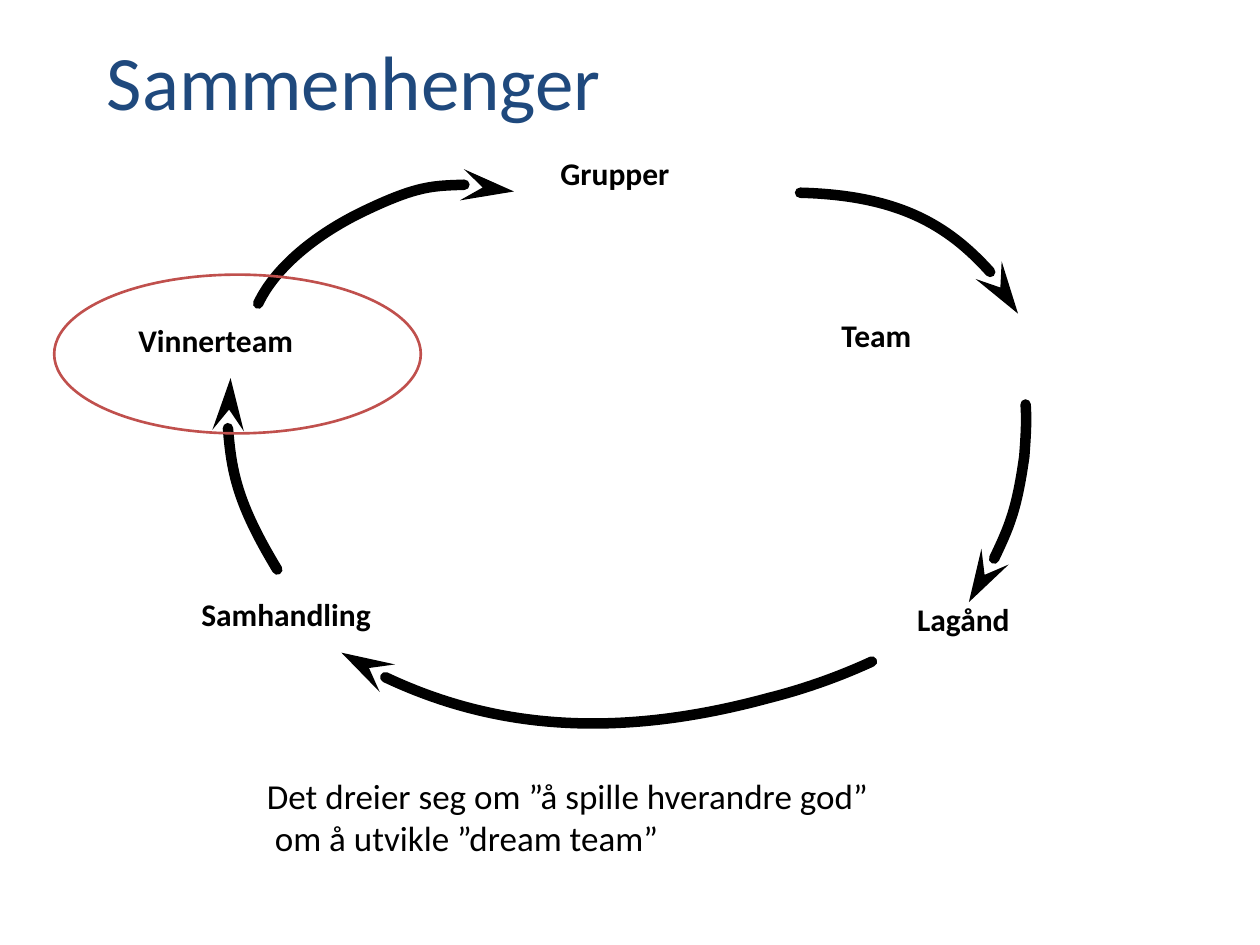
from math import cos, radians, sin

from pptx import Presentation
from pptx.dml.color import RGBColor
from pptx.enum.shapes import MSO_SHAPE
from pptx.enum.text import MSO_ANCHOR
from pptx.oxml.ns import qn
from pptx.oxml.xmlchemy import OxmlElement
from pptx.util import Inches, Pt

OVAL = MSO_SHAPE.OVAL
TOP, MIDDLE = MSO_ANCHOR.TOP, MSO_ANCHOR.MIDDLE

COLORS = {"title": "1F497D", "ink": "000000", "accent": "C0504D"}


def rotate(point, center, degrees):
    a = radians(degrees)
    dx, dy = point[0] - center[0], point[1] - center[1]
    return (center[0] + dx * cos(a) - dy * sin(a),
            center[1] + dx * sin(a) + dy * cos(a))


class Deck:
    font = "Calibri"

    def __init__(self, width, height):
        self.prs = Presentation()
        self.prs.slide_width, self.prs.slide_height = Inches(width), Inches(height)
        self.s = self.prs.slides.add_slide(self.prs.slide_layouts[6])

    def color(self, name):
        return RGBColor.from_string(COLORS[name])

    def outline(self, sp, color, weight):
        sp.shadow.inherit = False
        sp.fill.background()
        sp.line.color.rgb = self.color(color)
        sp.line.width = Pt(weight)

    def text(self, box, lines, size, color="ink", bold=False, anchor=TOP):
        tf = self.s.shapes.add_textbox(*map(Inches, box)).text_frame
        tf.word_wrap = True
        tf.vertical_anchor = anchor
        for i, line in enumerate(lines):
            p = tf.paragraphs[0] if i == 0 else tf.add_paragraph()
            p.text = line
            p.font.name, p.font.size, p.font.bold = self.font, Pt(size), bold
            p.font.color.rgb = self.color(color)

    def ellipse(self, box, color, weight):
        sp = self.s.shapes.add_shape(OVAL, *map(Inches, box))
        self.outline(sp, color, weight)

    def curved_arrow(self, box, rotation, points, color="ink", weight=6):
        """Start point, then three points for each Bézier segment."""
        left, top, width, height = box
        center = left + width / 2, top + height / 2
        level = [rotate(point, center, -rotation) for point in points]
        start, *rest = [(Inches(x), Inches(y)) for x, y in level]
        builder = self.s.shapes.build_freeform(*start)
        builder.add_line_segments(rest, close=False)
        sp = builder.convert_to_shape()
        self.outline(sp, color, weight)

        # Fit the frame to the box, keeping the points in place, then turn it
        dx, dy = sp.left - Inches(left), sp.top - Inches(top)
        for pt in sp._element.iter(qn("a:pt")):
            pt.set("x", str(int(pt.get("x")) + dx))
            pt.set("y", str(int(pt.get("y")) + dy))
        sp.left, sp.top, sp.width, sp.height = map(Inches, box)
        for geometry in sp._element.iter(qn("a:path")):
            geometry.set("w", str(sp.width))
            geometry.set("h", str(sp.height))
        sp.rotation = rotation

        # Merge every three straight steps into one cubic curve
        steps = list(sp._element.iter(qn("a:lnTo")))
        for i in range(0, len(steps), 3):
            curve = OxmlElement("a:cubicBezTo")
            steps[i].addprevious(curve)
            for step in steps[i:i + 3]:
                curve.append(step[0])
                step.getparent().remove(step)

        # Round ends and a long arrowhead
        ln = sp._element.spPr.find(qn("a:ln"))
        ln.set("cap", "rnd")
        ln.append(OxmlElement("a:round"))
        tail = OxmlElement("a:tailEnd")
        tail.set("type", "stealth")
        tail.set("len", "lg")
        ln.append(tail)


def main():
    deck = Deck(10, 7.5)

    # Title
    deck.text((0.75, 0.17, 8.5, 0.92), ["Sammenhenger"], 44, "title", anchor=MIDDLE)

    # Arrows, clockwise from the top: frame, rotation, curve
    arrows = [
        ((6.34, 1.55, 1.75, 1.42), 1,
         [(6.35, 1.53), (7.13, 1.55), (7.82, 1.93), (8.08, 2.49)]),
        ((6.42, 3.11, 1.67, 1.61), 7,
         [(8.14, 3.21), (8.15, 3.35), (8.14, 3.48), (8.13, 3.62),
          (8.07, 4.05), (7.92, 4.45), (7.69, 4.78)]),
        ((2.63, 3.31, 4.05, 2.57), 165,
         [(6.92, 5.25), (6.66, 5.37), (6.38, 5.47), (6.1, 5.54),
          (4.85, 5.88), (3.56, 5.74), (2.71, 5.18)]),
        ((1.46, 3.18, 1.5, 0.92), 239,
         [(2.2, 4.52), (1.88, 3.99), (1.74, 3.41), (1.83, 3)]),
        ((1.96, 1.63, 2.22, 0.71), 335,
         [(2.05, 2.41), (2.18, 2.13), (2.5, 1.86), (2.9, 1.67),
          (3.32, 1.47), (3.78, 1.41), (4.08, 1.52)]),
    ]
    for box, rotation, points in arrows:
        deck.curved_arrow(box, rotation, points)

    # Stages of the cycle
    stages = [
        ("Grupper", 4.35, 1.17, 1.47),
        ("Team", 6.58, 2.46, 2.5),
        ("Lagånd", 7.18, 4.71, 1.31),
        ("Samhandling", 1.5, 4.67, 2.16),
        ("Vinnerteam", 1, 2.5, 2),
    ]
    for name, left, top, width in stages:
        deck.text((left, top, width, 0.5), [name], 18, bold=True)

    # Conclusion
    deck.text((2.02, 6.1, 5.68, 0.77),
              ["Det dreier seg om ”å spille hverandre god”",
               " om å utvikle ”dream team”"], 20)

    # Highlight around the winning team
    deck.ellipse((0.43, 2.18, 2.91, 1.26), "accent", 1.5)

    deck.prs.save("out.pptx")


if __name__ == "__main__":
    main()
